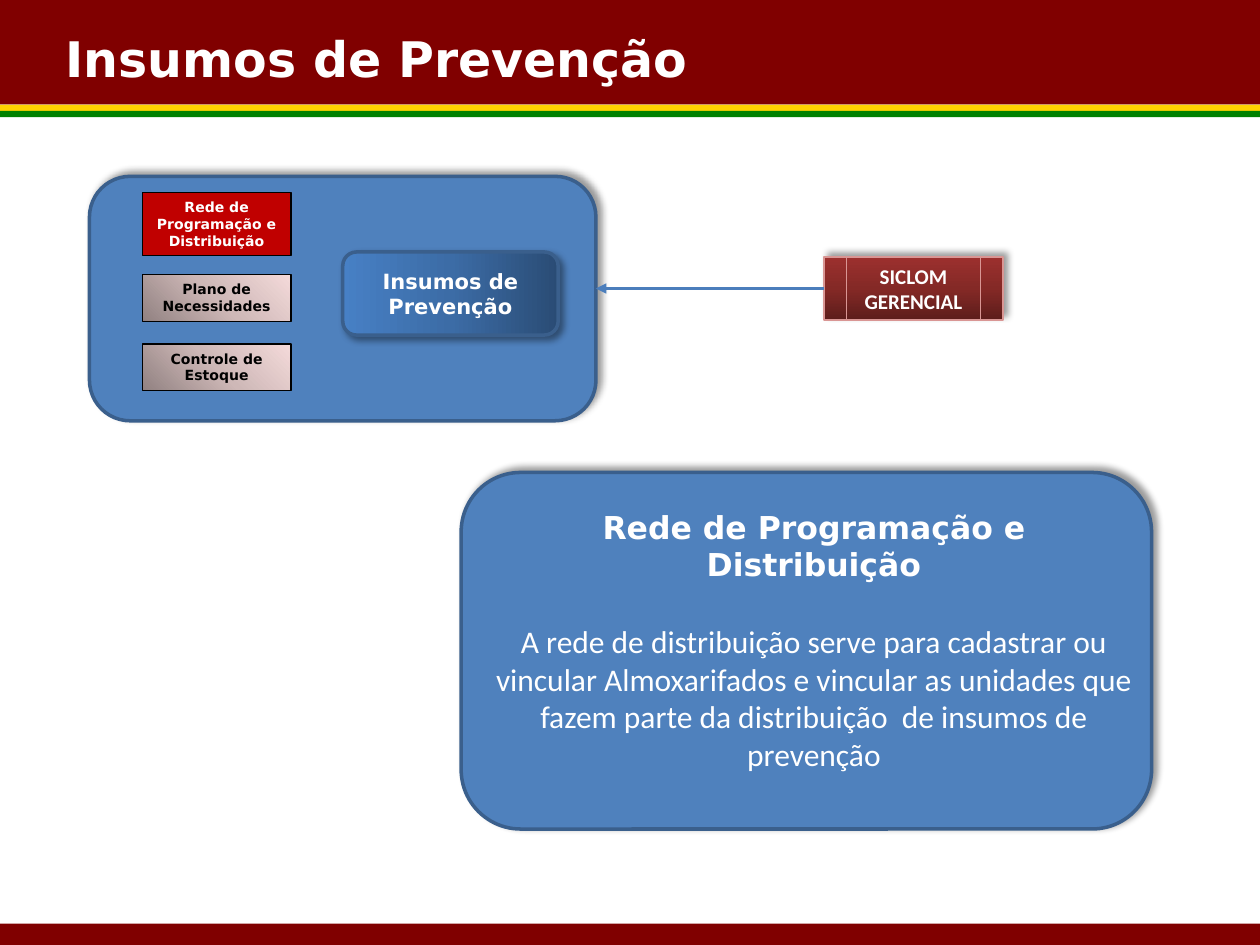
"""Build the slide on the prevention supplies distribution network."""
from dataclasses import dataclass
from typing import Optional

from lxml.etree import SubElement
from pptx import Presentation
from pptx.dml.color import RGBColor
from pptx.enum.shapes import MSO_CONNECTOR, MSO_SHAPE as Preset
from pptx.enum.text import MSO_ANCHOR as Anchor, MSO_AUTO_SIZE as AutoSize, PP_ALIGN as Align
from pptx.oxml.ns import qn
from pptx.util import Inches, Pt

HEADING_FONT = "DejaVu Sans"
BODY_FONT = "Calibri"
WHITE, BLACK, MAROON = "FFFFFF", "000000", "800000"
PANEL_BLUE, PANEL_EDGE = "4F81BD", "3A5F8C"
UP_RIGHT, DOWN_RIGHT = 315, 45


@dataclass(frozen=True)
class Gradient:
    colors: tuple[str, str, str]
    angle: int


@dataclass(frozen=True)
class Block:
    left: float
    top: float
    width: float
    height: float
    fill: str | Gradient
    preset: Preset = Preset.RECTANGLE
    edge: Optional[str] = None
    edge_width: float = 0.75
    shadow_angle: Optional[int] = None
    text: str = ""
    size: int = 12
    color: str = WHITE
    font: str = HEADING_FONT
    anchor: Anchor = Anchor.MIDDLE


PINK = Gradient(("918181", "CEB8B7", "F4DADA"), 315)
BLUE = Gradient(("2A4C75", "3C6CA6", "4780C5"), 180)
RED = Gradient(("5D1D1B", "842926", "9C302E"), 270)


def rgb(value: str) -> RGBColor:
    """Turn a hex string into a colour."""
    return RGBColor.from_string(value)


def write(para, text: str, *, size: int, font: str = HEADING_FONT, color: str = WHITE,
          bold: bool = True, align: Align = Align.CENTER, before: float = 0) -> None:
    """Put one formatted span of text in a paragraph."""
    para.alignment = align
    para.space_before = Pt(before)
    span = para.add_run()
    span.text = text
    span.font.size = Pt(size)
    span.font.name = font
    span.font.bold = bold
    span.font.color.rgb = rgb(color)


def paint(shape, fill: str | Gradient) -> None:
    """Fill a shape with one colour or a three-stop gradient."""
    if isinstance(fill, str):
        shape.fill.solid()
        shape.fill.fore_color.rgb = rgb(fill)
        return
    shape.fill.gradient()
    shape.fill.gradient_angle = 360 - fill.angle
    stops = shape._element.spPr.find(f".//{qn('a:gsLst')}")
    for stop in list(stops):
        stops.remove(stop)
    for position, color in zip((0, 50000, 100000), fill.colors):
        stop = SubElement(stops, qn("a:gs"), pos=str(position))
        SubElement(stop, qn("a:srgbClr"), val=color)


def cast_shadow(shape, angle: int) -> None:
    """Give a shape a soft black shadow in one direction."""
    effects = shape._element.spPr.find(qn("a:effectLst"))
    shadow = SubElement(effects, qn("a:outerShdw"), blurRad=str(Pt(4)), dist=str(Pt(3)),
                        dir=str(angle * 60000), rotWithShape="0")
    color = SubElement(shadow, qn("a:srgbClr"), val=BLACK)
    SubElement(color, qn("a:alpha"), val="40000")


def draw_block(page, block: Block) -> None:
    """Draw one block with its fill, edge, shadow and label."""
    shape = page.shapes.add_shape(block.preset, Inches(block.left), Inches(block.top),
                                  Inches(block.width), Inches(block.height))
    paint(shape, block.fill)
    if block.edge:
        shape.line.color.rgb = rgb(block.edge)
        shape.line.width = Pt(block.edge_width)
    else:
        shape.line.fill.background()
    shape.shadow.inherit = False
    if block.shadow_angle is not None:
        cast_shadow(shape, block.shadow_angle)
    if block.text:
        shape.text_frame.word_wrap = True
        shape.text_frame.vertical_anchor = block.anchor
        write(shape.text_frame.paragraphs[0], block.text, size=block.size,
              font=block.font, color=block.color)


def band(top: float, height: float, color: str) -> Block:
    """Describe a band across the whole page."""
    return Block(0, top, 10, height, color)


def panel(left: float, top: float, width: float, height: float) -> Block:
    """Describe a rounded blue panel."""
    return Block(left, top, width, height, PANEL_BLUE, Preset.ROUNDED_RECTANGLE,
                 PANEL_EDGE, 2, UP_RIGHT)


def step(top: float, height: float, text: str, fill: str | Gradient = PINK,
         color: str = BLACK) -> Block:
    """Describe one small step in the left column."""
    return Block(1.13, top, 1.18, height, fill, edge=BLACK, text=text, size=8,
                 color=color, anchor=Anchor.TOP)


def draw_arrow(page, start: float, end: float, height: float) -> None:
    """Draw a level arrow from start to end."""
    arrow = page.shapes.add_connector(MSO_CONNECTOR.STRAIGHT, Inches(start), Inches(height),
                                      Inches(end), Inches(height))
    arrow.line.color.rgb = rgb("4B7EBC")
    arrow.line.width = Pt(1.5)
    SubElement(arrow.line._get_or_add_ln(), qn("a:tailEnd"), type="triangle")
    SubElement(arrow._element.spPr, qn("a:effectLst"))


def set_title(page, text: str) -> None:
    """Place the page title on the top band."""
    title = page.shapes.title
    title.left, title.top = Inches(0.42), Inches(0.18)
    title.width, title.height = Inches(8.33), Inches(0.57)
    title.text_frame.vertical_anchor = Anchor.TOP
    title.text_frame.auto_size = AutoSize.NONE
    write(title.text_frame.paragraphs[0], text, size=28, align=Align.LEFT)


def add_description(page, heading: str, body: str) -> None:
    """Add the heading and explanation over the lower panel."""
    box = page.shapes.add_textbox(Inches(3.82), Inches(3.98), Inches(5.28), Inches(2.52))
    frame = box.text_frame
    frame.word_wrap = True
    write(frame.paragraphs[0], heading, size=18)
    write(frame.add_paragraph(), body, size=18, font=BODY_FONT, bold=False, before=22)


BLOCKS = (
    band(0.83, 0.05, "FFD200"),
    band(0, 0.83, MAROON),
    band(0.88, 0.05, "008000"),
    band(7.33, 0.17, MAROON),
    panel(0.71, 1.4, 4.02, 1.94),
    Block(2.72, 2, 1.71, 0.66, BLUE, Preset.ROUNDED_RECTANGLE, PANEL_EDGE, 2, DOWN_RIGHT,
          "Insumos de Prevenção"),
    step(2.73, 0.37, "Controle de Estoque"),
    step(2.18, 0.37, "Plano de Necessidades"),
    step(1.53, 0.5, "Rede de Programação e Distribuição", "C00000", WHITE),
    Block(6.54, 2.04, 1.42, 0.5, RED, Preset.FLOWCHART_PREDEFINED_PROCESS, "D99694",
          shadow_angle=UP_RIGHT, text="SICLOM GERENCIAL", font=BODY_FONT),
    panel(3.66, 3.75, 5.48, 2.83),
)


def main() -> None:
    """Build and save the deck."""
    deck = Presentation()
    deck.slide_width, deck.slide_height = Inches(10), Inches(7.5)
    page = deck.slides.add_slide(deck.slide_layouts.get_by_name("Title Only"))
    for block in BLOCKS:
        draw_block(page, block)
    draw_arrow(page, 6.54, 4.73, 2.29)
    set_title(page, "Insumos de Prevenção")
    title = page.shapes.title._element
    page.shapes._spTree.append(title)
    add_description(page, "Rede de Programação e Distribuição",
                    "A rede de distribuição serve para cadastrar ou vincular Almoxarifados e "
                    "vincular as unidades que fazem parte da distribuição  de insumos de prevenção")
    deck.save("out.pptx")


if __name__ == "__main__":
    main()
